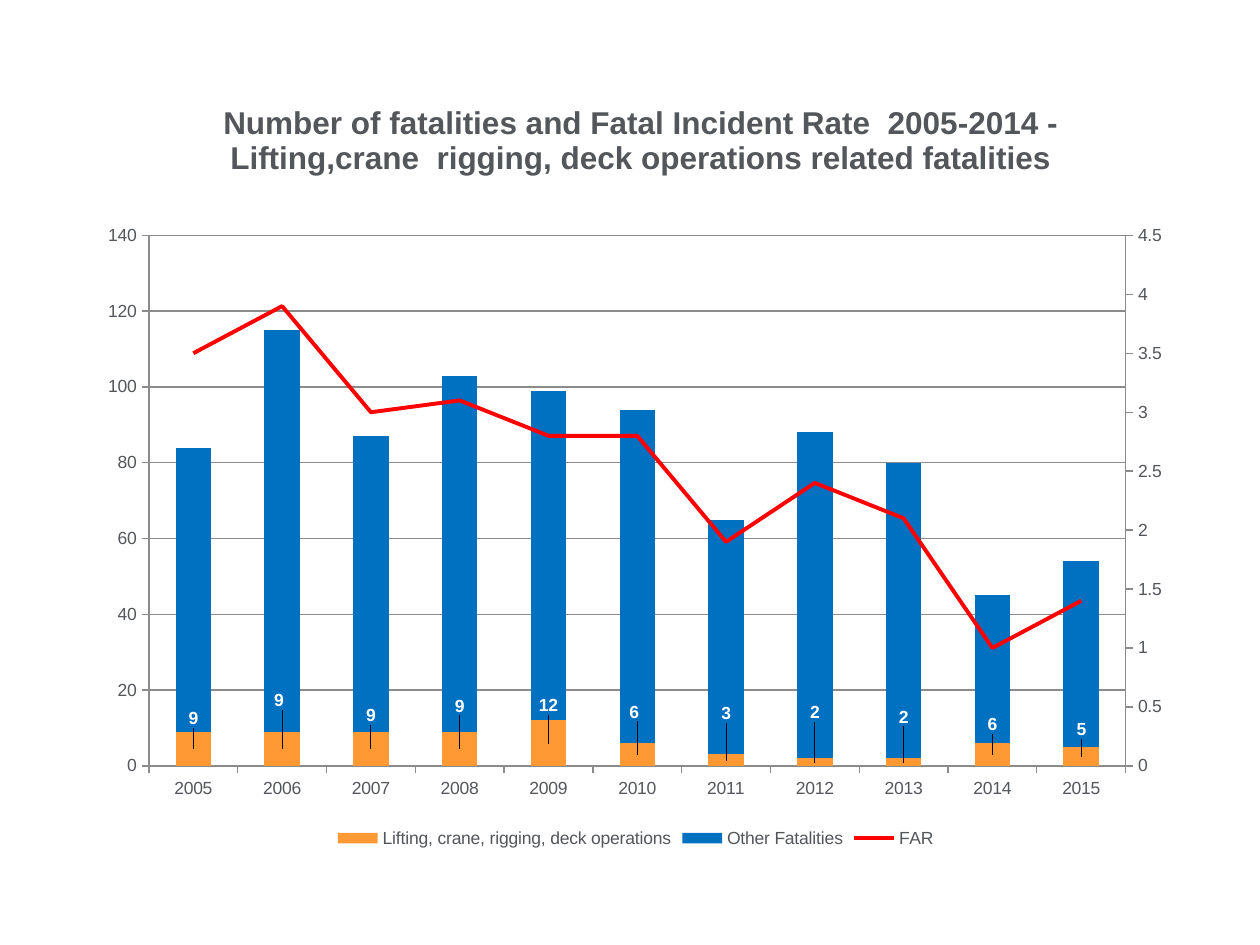
from copy import deepcopy
from dataclasses import dataclass

from pptx import Presentation
from pptx.chart.data import CategoryChartData
from pptx.dml.color import RGBColor
from pptx.enum.chart import (XL_CHART_TYPE, XL_LABEL_POSITION,
                             XL_LEGEND_POSITION, XL_MARKER_STYLE, XL_TICK_MARK)
from pptx.oxml.ns import qn
from pptx.oxml.xmlchemy import OxmlElement
from pptx.util import Inches, Pt

STACK = XL_CHART_TYPE.COLUMN_STACKED
BOTTOM = XL_LEGEND_POSITION.BOTTOM
CENTER = XL_LABEL_POSITION.CENTER
PLAIN = XL_MARKER_STYLE.NONE
OUT = XL_TICK_MARK.OUTSIDE


@dataclass(frozen=True)
class Theme:
    font: str = "Arial"
    text: str = "53565A"
    grid: str = "8B8B8B"
    lift: str = "FF9933"
    other: str = "0070C0"
    rate: str = "FF0000"
    label: str = "FFFFFF"
    body: int = 10
    head: int = 18


THEME = Theme()
TITLE = ("Number of fatalities and Fatal Incident Rate  2005-2014 - "
         "Lifting,crane  rigging, deck operations related fatalities")
YEARS = [str(year) for year in range(2005, 2016)]
LIFT = [9, 9, 9, 9, 12, 6, 3, 2, 2, 6, 5]
OTHER = [75, 106, 78, 94, 87, 88, 62, 86, 78, 39, 49]
RATE = [3.5, 3.9, 3, 3.1, 2.8, 2.8, 1.9, 2.4, 2.1, 1, 1.4]

# Height of each label above the axis, in units of the left axis
LABEL_AT = [12.4, 17.2, 13.2, 15.8, 15.8, 14.2, 13.7, 14, 12.9, 10.8, 9.5]
NUDGE = {"2006": -0.003, "2010": -0.003}
TOP, STEP = 140, 20
PLOT = dict(x=0.0565, y=0.212, w=0.89, h=0.677)


def color(code):
    return RGBColor.from_string(code)


def style(font, size, code, bold=False):
    font.name, font.size, font.bold = THEME.font, Pt(size), bold
    font.color.rgb = color(code)


def add(parent, tag, val=None):
    node = OxmlElement(tag)
    parent.append(node)
    if val is not None:
        node.set("val", str(val))
    return node


def drop(parent, tag):
    for node in parent.findall(qn(tag)):
        parent.remove(node)


def layout(inner=False, edge=True, **place):
    """Manual layout, in fractions of the chart area."""
    node = OxmlElement("c:layout")
    manual = add(node, "c:manualLayout")
    if inner:
        add(manual, "c:layoutTarget", "inner")
    if edge:
        add(manual, "c:xMode", "edge")
        add(manual, "c:yMode", "edge")
    for key, val in place.items():
        add(manual, f"c:{key}", round(val, 4))
    return node


def set_layout(parent, node, after=None):
    drop(parent, "c:layout")
    if after is None:
        parent.insert(0, node)
    else:
        parent.find(qn(after)).addnext(node)


def add_title(chart):
    para = chart.chart_title.text_frame.paragraphs[0]
    run = para.add_run()
    run.text = TITLE
    style(run.font, THEME.head, THEME.text, True)
    title = chart.chart_title._element
    set_layout(title, layout(x=0.119, y=0.034), "c:tx")


def set_axes(chart):
    for axis in (chart.category_axis, chart.value_axis):
        axis.major_tick_mark = OUT
        axis.format.line.color.rgb = color(THEME.grid)
        axis.format.line.width = Pt(0.75)
        style(axis.tick_labels.font, THEME.body, THEME.text)
    left = chart.value_axis
    left.minimum_scale, left.maximum_scale, left.major_unit = 0, TOP, STEP
    left.has_major_gridlines = True
    left.major_gridlines.format.line.color.rgb = color(THEME.grid)
    left.major_gridlines.format.line.width = Pt(0.75)


def set_bars(chart):
    plot = chart.plots[0]
    plot.gap_width, plot.overlap, plot.vary_by_categories = 150, 100, False
    for series, code in zip(plot.series, (THEME.lift, THEME.other)):
        series.format.fill.solid()
        series.format.fill.fore_color.rgb = color(code)


def set_labels(series):
    labels = series.data_labels
    labels.show_value = True
    style(labels.font, THEME.body, THEME.label, True)
    for i in range(len(YEARS)):
        label = series.points[i].data_label
        style(label.font, THEME.body, THEME.label, True)
        label.position = CENTER
    # Offsets run from the middle of each bar
    for node in series._element.iter(qn("c:dLbl")):
        i = int(node.find(qn("c:idx")).get("val"))
        rise = (LABEL_AT[i] - LIFT[i] / 2) / TOP * PLOT["h"]
        move = layout(edge=False, x=NUDGE.get(YEARS[i], 0), y=-rise)
        set_layout(node, move, "c:idx")


def add_rate(chart):
    """Move the last series to a line on a second pair of axes."""
    area = chart._chartSpace.find(f".//{qn('c:plotArea')}")
    bars = area.find(qn("c:barChart"))
    series = bars.findall(qn("c:ser"))[-1]
    drop(series, "c:invertIfNegative")
    line = OxmlElement("c:lineChart")
    add(line, "c:grouping", "standard")
    add(line, "c:varyColors", 0)
    line.append(series)
    add(line, "c:marker", 1)
    bars.addnext(line)

    cat, val = (deepcopy(area.find(qn(tag))) for tag in ("c:catAx", "c:valAx"))
    for axis, own, cross in ((cat, 5001, 5002), (val, 5002, 5001)):
        add(line, "c:axId", own)
        axis.find(qn("c:axId")).set("val", str(own))
        axis.find(qn("c:crossAx")).set("val", str(cross))
    cat.find(qn("c:delete")).set("val", "1")
    drop(val, "c:majorGridlines")
    for tag, new in (("c:axPos", "r"), ("c:crosses", "max"),
                     ("c:majorUnit", "0.5"), ("c:scaling/c:max", "4.5")):
        node = val.find("/".join(qn(part) for part in tag.split("/")))
        node.set("val", new)
    area.findall(qn("c:valAx"))[-1].addnext(val)
    val.addnext(cat)
    set_layout(area, layout(inner=True, **PLOT))

    rate = chart.plots[1].series[0]
    rate.smooth = False
    rate.marker.style = PLAIN
    rate.format.line.color.rgb = color(THEME.rate)
    rate.format.line.width = Pt(2.25)


def add_chart(slide):
    data = CategoryChartData()
    data.categories = YEARS
    data.add_series("Lifting, crane, rigging, deck operations", LIFT)
    data.add_series("Other Fatalities", OTHER)
    data.add_series("FAR", RATE)
    chart = slide.shapes.add_chart(STACK, Inches(0.69), Inches(0.55),
                                   Inches(8.71), Inches(6.22), data).chart
    style(chart.font, THEME.body, THEME.text)
    add_title(chart)
    set_axes(chart)
    set_bars(chart)
    set_labels(chart.plots[0].series[0])
    add_rate(chart)
    # Legend
    chart.has_legend = True
    chart.legend.position = BOTTOM
    chart.legend.include_in_layout = False
    style(chart.legend.font, THEME.body, THEME.text)


def main():
    deck = Presentation()
    deck.slide_width, deck.slide_height = Inches(10), Inches(7.5)
    slide = deck.slides.add_slide(deck.slide_layouts[6])
    add_chart(slide)
    deck.save("out.pptx")


if __name__ == "__main__":
    main()
